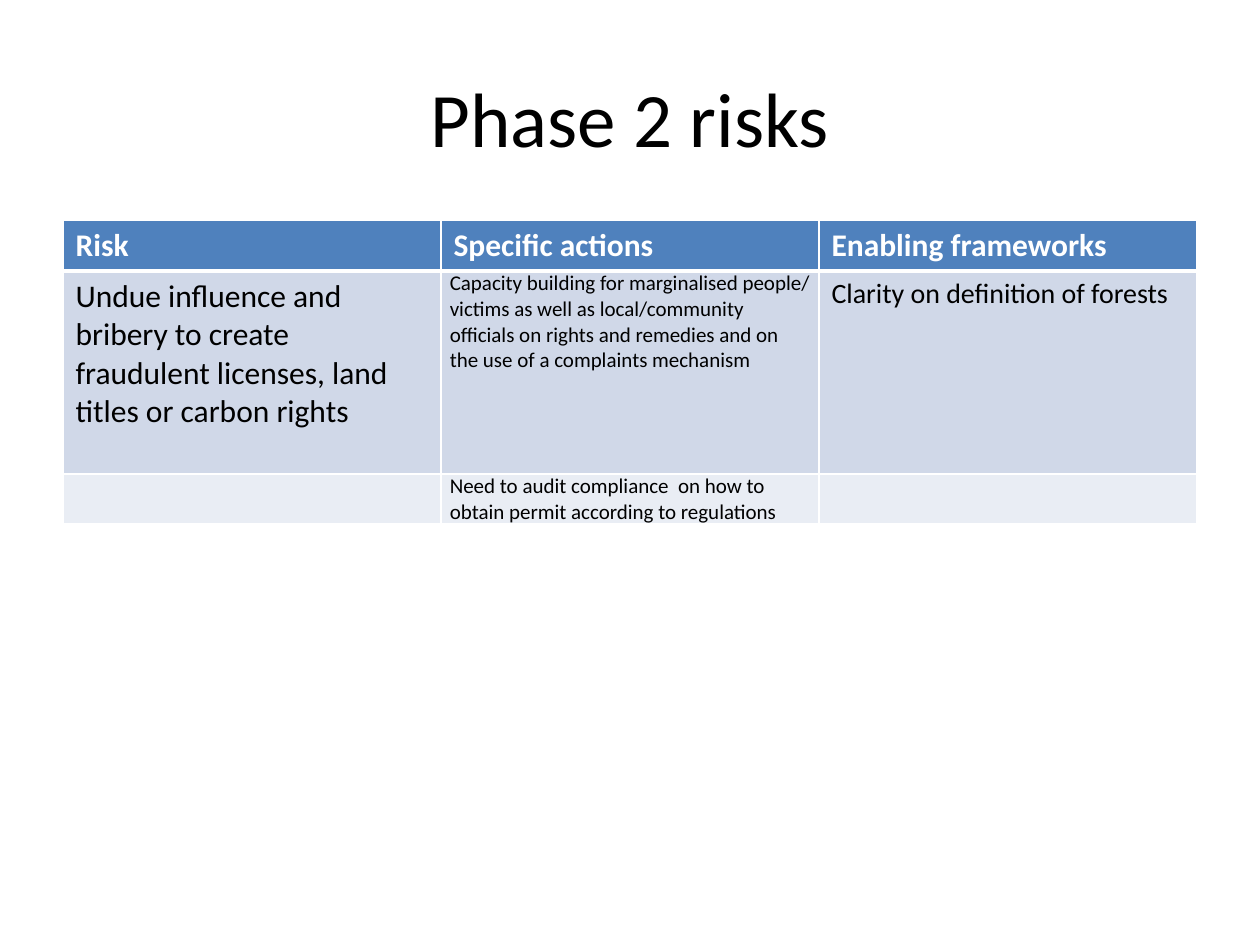
"""Build the slide with a table of phase 2 risks, actions and frameworks."""
from typing import NamedTuple

from lxml import etree
from pptx import Presentation
from pptx.dml.color import RGBColor
from pptx.enum.text import MSO_ANCHOR, PP_ALIGN
from pptx.oxml.ns import qn
from pptx.slide import Slide
from pptx.table import _Cell
from pptx.text.text import _Paragraph
from pptx.util import Inches, Pt

CENTER = PP_ALIGN.CENTER
MIDDLE = MSO_ANCHOR.MIDDLE
FONT = "Calibri"
COLORS = {
    "text": "000000",
    "header": "4F81BD",
    "odd_row": "D0D8E8",
    "even_row": "E9EDF4",
    "white": "FFFFFF",
}


class CellText(NamedTuple):
    text: str = ""
    size: int = 18
    tight: bool = False


class TableRow(NamedTuple):
    height: float
    fill: str
    cells: tuple[CellText, ...]
    header: bool = False


RISK_ROWS = (
    TableRow(
        0.4,
        "header",
        (CellText("Risk"), CellText("Specific actions"), CellText("Enabling frameworks")),
        header=True,
    ),
    TableRow(
        1.61,
        "odd_row",
        (
            CellText(
                "Undue influence and bribery to create fraudulent licenses, "
                "land titles or carbon rights"
            ),
            CellText(
                "Capacity building for marginalised people/ victims as well as "
                "local/community officials on rights and remedies and on the use "
                "of a complaints mechanism",
                12,
                True,
            ),
            CellText("Clarity on definition of forests", 16),
        ),
    ),
    TableRow(
        0.4,
        "even_row",
        (
            CellText(),
            CellText(
                "Need to audit compliance  on how to obtain permit according to regulations",
                12,
                True,
            ),
            CellText(),
        ),
    ),
)


def add_run(
    paragraph: _Paragraph, text: str, size: int, color: str, bold: bool = False
) -> None:
    run = paragraph.add_run()
    run.text = text
    run.font.name = FONT
    run.font.size = Pt(size)
    run.font.bold = bold
    run.font.color.rgb = RGBColor.from_string(COLORS[color])


def add_title(slide: Slide, text: str) -> None:
    shape = slide.shapes.add_textbox(Inches(0.5), Inches(0.3), Inches(9), Inches(1.25))
    frame = shape.text_frame
    frame.word_wrap = True
    frame.vertical_anchor = MIDDLE
    paragraph = frame.paragraphs[0]
    paragraph.alignment = CENTER
    add_run(paragraph, text, 44, "text")


def set_borders(cell: _Cell, top: int, bottom: int) -> None:
    properties = cell._tc.get_or_add_tcPr()
    for side, width in (("L", 1), ("R", 1), ("T", top), ("B", bottom)):
        line = etree.SubElement(properties, qn(f"a:ln{side}"), w=str(Pt(width)))
        fill = etree.SubElement(line, qn("a:solidFill"))
        etree.SubElement(fill, qn("a:srgbClr"), val=COLORS["white"])


def fill_cell(cell: _Cell, content: CellText, row: TableRow, top: int) -> None:
    set_borders(cell, top, 3 if row.header else 1)
    cell.fill.solid()
    cell.fill.fore_color.rgb = RGBColor.from_string(COLORS[row.fill])
    if content.tight:
        cell.margin_left = cell.margin_right = Inches(0.07)
        cell.margin_top = cell.margin_bottom = Inches(0)
    paragraph = cell.text_frame.paragraphs[0]
    paragraph.font.size = Pt(content.size)
    if content.text:
        color = "white" if row.header else "text"
        add_run(paragraph, content.text, content.size, color, row.header)


def add_risk_table(slide: Slide, rows: tuple[TableRow, ...]) -> None:
    height = sum(row.height for row in rows)
    table = slide.shapes.add_table(
        len(rows), len(rows[0].cells), Inches(0.5), Inches(1.75), Inches(9), Inches(height)
    ).table
    for index, row in enumerate(rows):
        table.rows[index].height = Inches(row.height)
        top = 3 if index and rows[index - 1].header else 1
        for column, content in enumerate(row.cells):
            fill_cell(table.cell(index, column), content, row, top)


def main() -> None:
    presentation = Presentation()
    presentation.slide_width = Inches(10)
    presentation.slide_height = Inches(7.5)
    slide = presentation.slides.add_slide(presentation.slide_layouts[6])
    add_title(slide, "Phase 2 risks")
    add_risk_table(slide, RISK_ROWS)
    presentation.save("out.pptx")


if __name__ == "__main__":
    main()
